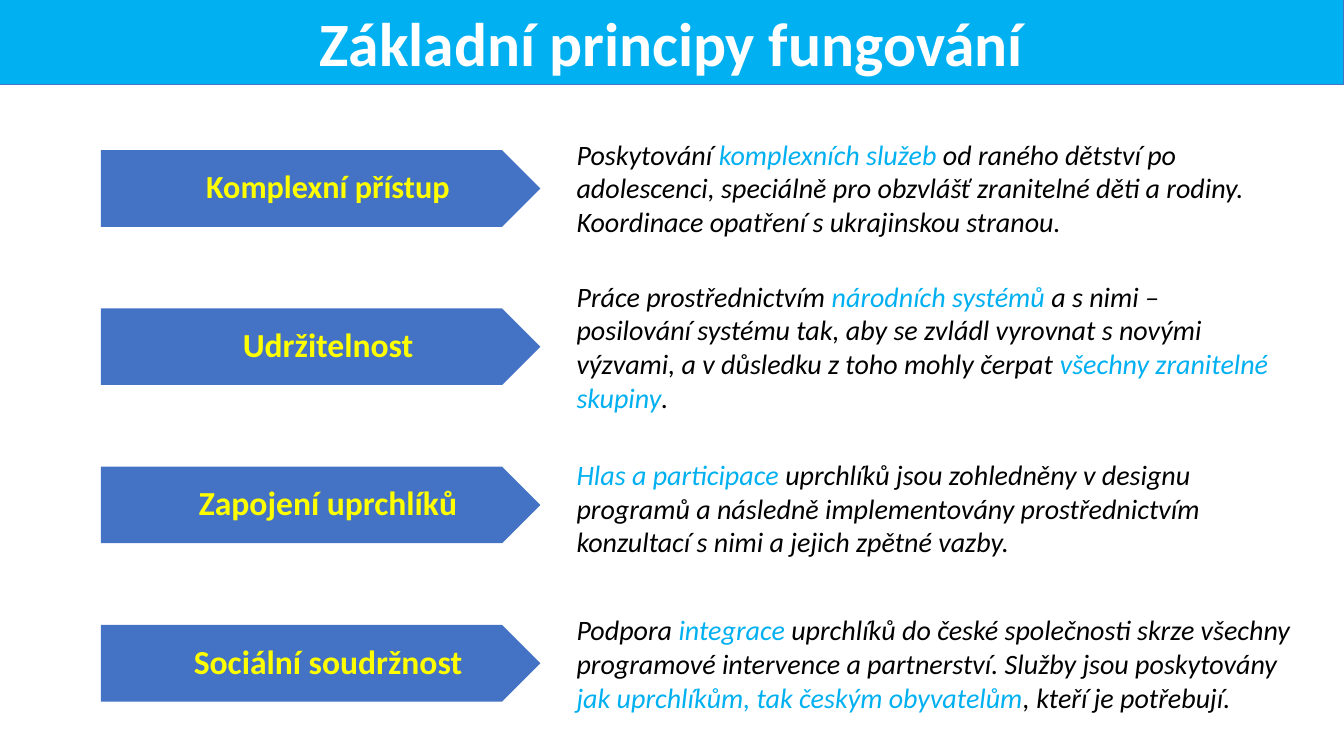
"""Builds the slide on basic operating principles: four arrows with descriptions."""
from pptx import Presentation
from pptx.dml.color import RGBColor
from pptx.enum.shapes import MSO_SHAPE
from pptx.enum.text import MSO_ANCHOR, PP_ALIGN
from pptx.util import Inches, Pt

RECTANGLE, ARROW = MSO_SHAPE.RECTANGLE, MSO_SHAPE.PENTAGON
CENTER, LEFT = PP_ALIGN.CENTER, PP_ALIGN.LEFT
TOP, MIDDLE = MSO_ANCHOR.TOP, MSO_ANCHOR.MIDDLE

FONT = "Calibri"
COLORS = {"cyan": "00B0F0", "blue": "4472C4", "yellow": "FFFF00",
          "white": "FFFFFF", "black": "000000"}

TITLE = "Základní principy fungování"
PRINCIPLES = [
    {"label": "Komplexní přístup", "size": 23, "top": 1.31, "width": 7.09, "height": 1.11,
     "spans": [("Poskytování ", "black"), ("komplexních služeb ", "cyan"),
               ("od raného dětství po adolescenci, speciálně pro obzvlášť zranitelné děti "
                "a rodiny. Koordinace opatření s ukrajinskou stranou.", "black")]},
    {"label": "Udržitelnost", "size": 24, "top": 2.72, "width": 7.09, "height": 1.45,
     "spans": [("Práce prostřednictvím ", "black"), ("národních systémů ", "cyan"),
               ("a s nimi – posilování systému tak, aby se zvládl vyrovnat s novými "
                "výzvami, a v důsledku z toho mohly čerpat ", "black"),
               ("všechny zranitelné skupiny", "cyan"), (".", "black")]},
    {"label": "Zapojení uprchlíků", "size": 24, "top": 4.49, "width": 7.33, "height": 1.11,
     "spans": [("Hlas a participace ", "cyan"),
               ("uprchlíků jsou zohledněny v designu programů a následně implementovány "
                "prostřednictvím konzultací s nimi a jejich zpětné vazby.", "black")]},
    {"label": "Sociální soudržnost", "size": 24, "top": 6.03, "width": 7.33, "height": 1.11,
     "spans": [("Podpora ", "black"), ("integrace ", "cyan"),
               ("uprchlíků do české společnosti skrze všechny programové intervence "
                "a partnerství. Služby jsou poskytovány ", "black"),
               ("jak uprchlíkům, tak českým obyvatelům", "cyan"),
               (", kteří je potřebují.", "black")]},
]
ARROW_LEFT, ARROW_TOP, ARROW_PITCH = 1, 1.49, 1.57
ARROW_WIDTH, ARROW_HEIGHT = 4.36, 0.76
TEXT_LEFT = 5.62


def color(name):
    return RGBColor.from_string(COLORS[name])


def write(shape, spans, size, align, anchor, bold=False, italic=False):
    frame = shape.text_frame
    frame.word_wrap = True
    frame.vertical_anchor = anchor
    para = frame.paragraphs[0]
    para.alignment = align
    for text, name in spans:
        span = para.add_run()
        span.text = text
        span.font.name = FONT
        span.font.size = Pt(size)
        span.font.bold = bold
        span.font.italic = italic
        span.font.color.rgb = color(name)
    return frame


def add_filled(slide, kind, bounds, fill):
    shape = slide.shapes.add_shape(kind, *map(Inches, bounds))
    shape.shadow.inherit = False
    shape.fill.solid()
    shape.fill.fore_color.rgb = color(fill)
    shape.line.fill.background()
    return shape


def add_principle(slide, index, principle):
    bounds = (ARROW_LEFT, ARROW_TOP + index * ARROW_PITCH, ARROW_WIDTH, ARROW_HEIGHT)
    arrow = add_filled(slide, ARROW, bounds, "blue")
    frame = write(arrow, [(principle["label"], "yellow")], principle["size"],
                  CENTER, MIDDLE, bold=True)
    frame.margin_left, frame.margin_right = Inches(0.53), Inches(0.19)
    frame.margin_top = frame.margin_bottom = Inches(0.1)
    frame.paragraphs[0].line_spacing = 0.9

    bounds = (TEXT_LEFT, principle["top"], principle["width"], principle["height"])
    box = slide.shapes.add_textbox(*map(Inches, bounds))
    write(box, principle["spans"], 20, LEFT, TOP, italic=True)


def main():
    deck = Presentation()
    deck.slide_width, deck.slide_height = Inches(13.33), Inches(7.5)
    slide = deck.slides.add_slide(deck.slide_layouts[6])

    banner = add_filled(slide, RECTANGLE, (0, 0, 13.33, 0.84), "cyan")
    banner.line.color.rgb = color("blue")
    banner.line.width = Pt(0.75)
    write(banner, [(TITLE, "white")], 44, CENTER, TOP, bold=True)

    for index, principle in enumerate(PRINCIPLES):
        add_principle(slide, index, principle)
    deck.save("out.pptx")


if __name__ == "__main__":
    main()
